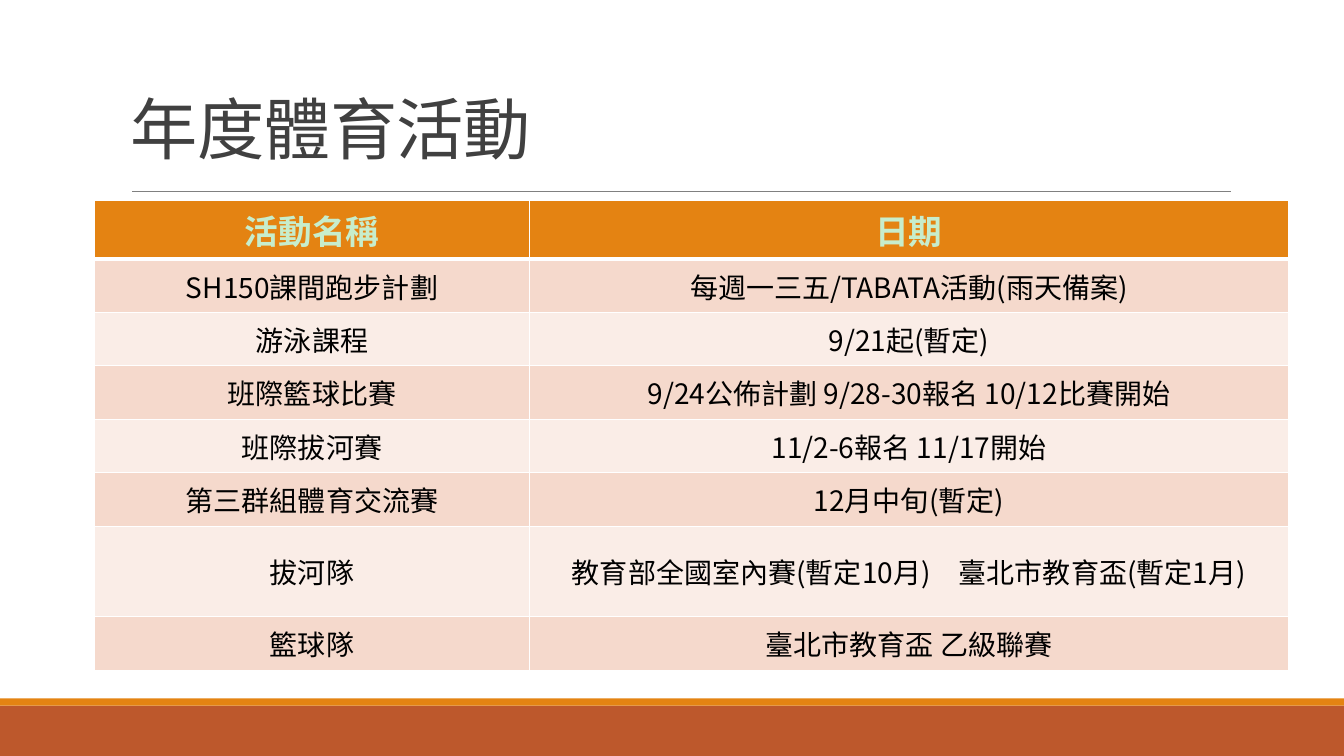
import pptx
import pptx.dml.color
import pptx.enum.shapes
import pptx.enum.text
import pptx.oxml.ns
import pptx.util
from lxml import etree
from pptx.util import Inches

FONT = "Noto Sans CJK SC"
TITLE = "年度體育活動"
HEADER = ("活動名稱", "日期")
ACTIVITIES = [
    ("SH150課間跑步計劃", "每週一三五/TABATA活動(雨天備案)"),
    ("游泳課程", "9/21起(暫定)"),
    ("班際籃球比賽", "9/24公佈計劃 9/28-30報名 10/12比賽開始"),
    ("班際拔河賽", "11/2-6報名 11/17開始"),
    ("第三群組體育交流賽", "12月中旬(暫定)"),
    ("拔河隊", "教育部全國室內賽(暫定10月)　臺北市教育盃(暫定1月)"),
    ("籃球隊", "臺北市教育盃 乙級聯賽"),
]
COLUMN_WIDTHS = (4.31, 7.53)
HEADER_HEIGHT, ROW_HEIGHT, TWO_LINE_HEIGHT = 0.58, 0.53, 0.9
TWO_LINE_ACTIVITY = "拔河隊"
ORANGE, RUST, WHITE, MINT = "E48312", "BD582C", "FFFFFF", "C7EDCC"
BANDS = ("F5D9CC", "FAEDE7")
FOOTER_BANDS = [(7, 0.5, RUST), (6.93, 0.07, ORANGE)]


def rgb(color):
    return pptx.dml.color.RGBColor.from_string(color)


def paint(fill, color):
    fill.solid()
    fill.fore_color.rgb = rgb(color)


def add_run(paragraph, text, size, color, bold=False):
    run = paragraph.add_run()
    run.text = text
    run.font.name = FONT
    run.font.size = pptx.util.Pt(size)
    run.font.bold = bold
    run.font.color.rgb = rgb(color)
    properties = run.font._element
    east_asian = etree.SubElement(properties, pptx.oxml.ns.qn("a:ea"))
    east_asian.set("typeface", FONT)
    return run


def add_border(cell, side, points):
    """Draw one white cell edge; call in the order L, R, T, B, before the fill."""
    properties = cell._tc.get_or_add_tcPr()
    line = etree.SubElement(properties, pptx.oxml.ns.qn("a:ln" + side))
    line.set("w", str(pptx.util.Pt(points)))
    solid = etree.SubElement(line, pptx.oxml.ns.qn("a:solidFill"))
    etree.SubElement(solid, pptx.oxml.ns.qn("a:srgbClr")).set("val", WHITE)


def add_footer(slide, width):
    for top, height, color in FOOTER_BANDS:
        band = slide.shapes.add_shape(
            pptx.enum.shapes.MSO_SHAPE.RECTANGLE, 0, Inches(top), width, Inches(height))
        band.shadow.inherit = False
        paint(band.fill, color)
        band.line.fill.background()


def add_title(slide):
    rule = slide.shapes.add_connector(
        pptx.enum.shapes.MSO_CONNECTOR.STRAIGHT,
        Inches(1.31), Inches(1.9), Inches(12.21), Inches(1.9))
    rule.line.color.rgb = rgb("808080")
    rule.line.width = pptx.util.Pt(0.5)
    etree.SubElement(rule._element.spPr, pptx.oxml.ns.qn("a:effectLst"))

    title = slide.shapes.add_textbox(Inches(1.2), Inches(0.13), Inches(11), Inches(1.59))
    frame = title.text_frame
    frame.word_wrap = True
    frame.vertical_anchor = pptx.enum.text.MSO_ANCHOR.BOTTOM
    paragraph = frame.paragraphs[0]
    paragraph.line_spacing = 0.85
    run = add_run(paragraph, TITLE, 48, "404040")
    run.font._element.set("spc", "-50")


def add_activity_table(slide):
    rows = [HEADER] + ACTIVITIES
    heights = [HEADER_HEIGHT] + [
        TWO_LINE_HEIGHT if name == TWO_LINE_ACTIVITY else ROW_HEIGHT
        for name, _ in ACTIVITIES]
    table = slide.shapes.add_table(
        len(rows), len(COLUMN_WIDTHS), Inches(0.94), Inches(1.99),
        Inches(sum(COLUMN_WIDTHS)), Inches(sum(heights))).table
    for column, width in zip(table.columns, COLUMN_WIDTHS):
        column.width = Inches(width)
    for row_index, (texts, height) in enumerate(zip(rows, heights)):
        is_header = row_index == 0
        table.rows[row_index].height = Inches(height)
        edges = {"L": 1, "R": 1, "T": 3 if row_index == 1 else 1, "B": 3 if is_header else 1}
        for column_index, text in enumerate(texts):
            cell = table.cell(row_index, column_index)
            for side, points in edges.items():
                add_border(cell, side, points)
            paint(cell.fill, ORANGE if is_header else BANDS[(row_index - 1) % 2])
            if not is_header:
                cell.vertical_anchor = pptx.enum.text.MSO_ANCHOR.MIDDLE
            paragraph = cell.text_frame.paragraphs[0]
            paragraph.alignment = pptx.enum.text.PP_ALIGN.CENTER
            if is_header:
                add_run(paragraph, text, 24, MINT, bold=True)
            else:
                add_run(paragraph, text, 20, "000000")


def main():
    presentation = pptx.Presentation()
    presentation.slide_width = Inches(13.33)
    presentation.slide_height = Inches(7.5)
    slide = presentation.slides.add_slide(presentation.slide_layouts[6])
    paint(slide.background.fill, WHITE)
    add_footer(slide, presentation.slide_width)
    add_title(slide)
    add_activity_table(slide)
    presentation.save("out.pptx")


if __name__ == "__main__":
    main()
